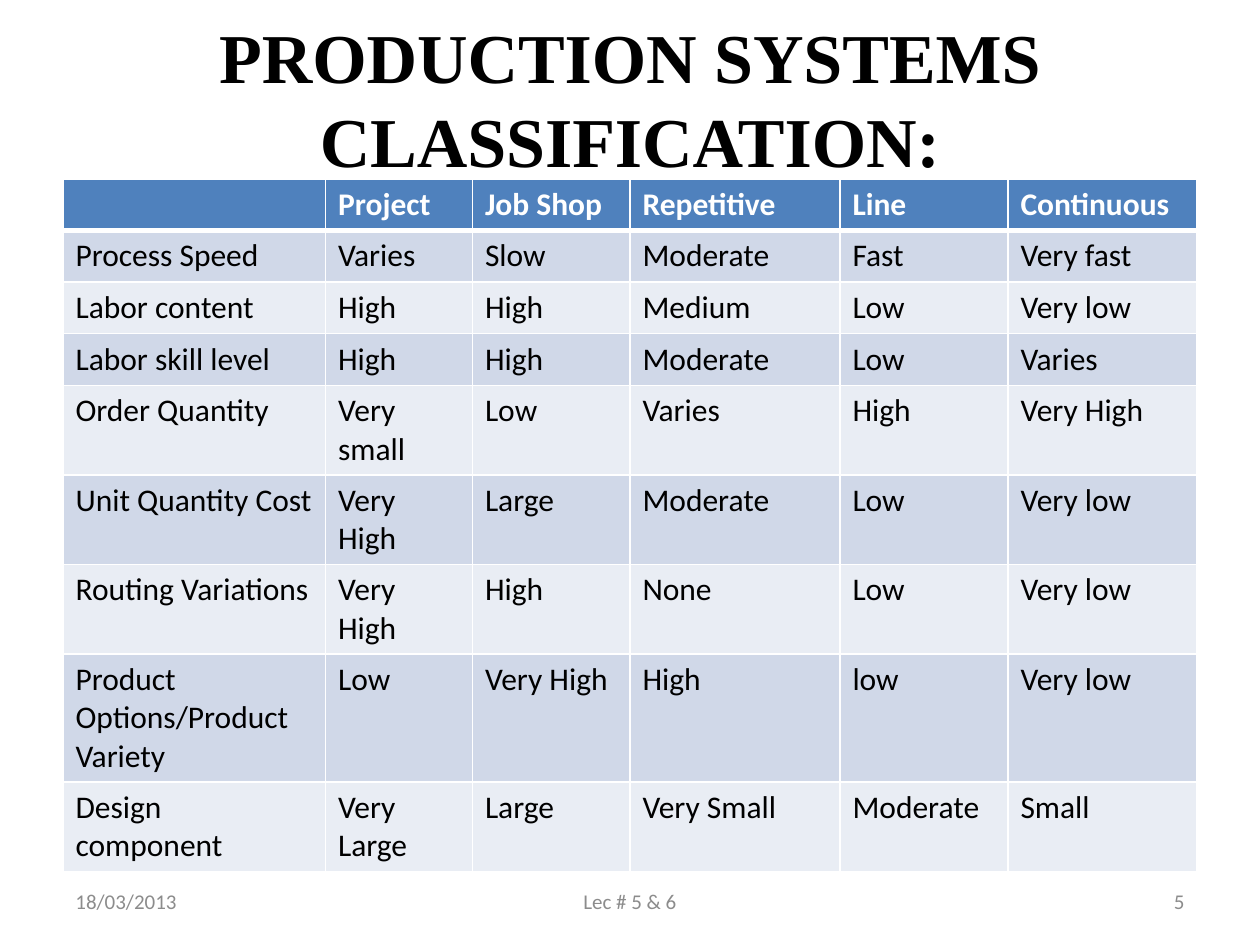
import pptx
import pptx.util
import pptx.dml.color
import pptx.enum.text
import pptx.oxml.ns
from lxml import etree

Pt = pptx.util.Pt
RGBColor = pptx.dml.color.RGBColor
ALIGN = pptx.enum.text.PP_ALIGN
MIDDLE = pptx.enum.text.MSO_ANCHOR.MIDDLE
qn = pptx.oxml.ns.qn

BLACK = RGBColor(0x00, 0x00, 0x00)
WHITE = RGBColor(0xFF, 0xFF, 0xFF)
HEADER_BLUE = RGBColor(0x4F, 0x81, 0xBD)
BAND_DARK = RGBColor(0xD0, 0xD8, 0xE8)
BAND_LIGHT = RGBColor(0xE9, 0xED, 0xF4)
FOOTER_GREY = RGBColor(0x8C, 0x8C, 0x8C)

TITLE_FORMAT = {"name": "Times New Roman", "size": Pt(40), "bold": True, "color": BLACK}
HEADER_FORMAT = {"name": "Calibri", "size": Pt(18), "bold": True, "color": WHITE}
BODY_FORMAT = {**HEADER_FORMAT, "bold": False, "color": BLACK}
FOOTER_FORMAT = {"name": "Calibri", "size": Pt(12), "color": FOOTER_GREY}

COLUMN_WIDTHS = [150, 84, 90, 120, 96, 108]
ROW_HEIGHT = 29.5
CLASSIFICATION = [
    ["", "Project", "Job Shop", "Repetitive", "Line", "Continuous"],
    ["Process Speed", "Varies", "Slow", "Moderate", "Fast", "Very fast"],
    ["Labor content", "High", "High", "Medium", "Low", "Very low"],
    ["Labor skill level", "High", "High", "Moderate", "Low", "Varies"],
    ["Order Quantity", "Very small", "Low", "Varies", "High", "Very High"],
    ["Unit Quantity Cost", "Very High", "Large", "Moderate", "Low", "Very low"],
    ["Routing Variations", "Very High", "High", "None", "Low", "Very low"],
    ["Product Options/Product Variety", "Low", "Very High", "High", "low", "Very low"],
    ["Design component", "Very Large", "Large", "Very Small", "Moderate", "Small"],
]


def format_font(font, values):
    for attribute, value in values.items():
        if attribute == "color":
            font.color.rgb = value
        else:
            setattr(font, attribute, value)


def write(frame, text, values, align):
    frame.word_wrap = True
    frame.vertical_anchor = MIDDLE
    paragraph = frame.paragraphs[0]
    paragraph.alignment = align
    run = paragraph.add_run()
    run.text = text
    format_font(run.font, values)


def set_borders(cell, widths):
    """Draw white borders; widths maps each side (L, R, T, B) to points."""
    properties = cell._tc.get_or_add_tcPr()
    for side, width in widths.items():
        line = etree.SubElement(properties, qn(f"a:ln{side}"), w=str(Pt(width)))
        fill = etree.SubElement(line, qn("a:solidFill"))
        etree.SubElement(fill, qn("a:srgbClr"), val=str(WHITE))


def place_title(slide, left, top, width, height):
    title = slide.shapes.title
    title.left, title.top, title.width, title.height = map(Pt, (left, top, width, height))
    write(title.text_frame, "PRODUCTION SYSTEMS CLASSIFICATION:", TITLE_FORMAT, ALIGN.CENTER)


def place_classification(slide, left, top):
    row_count, column_count = len(CLASSIFICATION), len(COLUMN_WIDTHS)
    table = slide.shapes.add_table(
        row_count, column_count, Pt(left), Pt(top),
        Pt(sum(COLUMN_WIDTHS)), Pt(ROW_HEIGHT * row_count)).table
    for column, width in zip(table.columns, COLUMN_WIDTHS):
        column.width = Pt(width)
    for r, labels in enumerate(CLASSIFICATION):
        table.rows[r].height = Pt(ROW_HEIGHT)
        # Header row first, then alternating bands
        band = HEADER_BLUE if r == 0 else BAND_DARK if r % 2 else BAND_LIGHT
        borders = {"L": 1, "R": 1, "T": 3 if r == 1 else 1, "B": 3 if r == 0 else 1}
        for c, label in enumerate(labels):
            cell = table.cell(r, c)
            set_borders(cell, borders)
            cell.fill.solid()
            cell.fill.fore_color.rgb = band
            paragraph = cell.text_frame.paragraphs[0]
            cell_format = BODY_FORMAT if r else HEADER_FORMAT
            if label:
                run = paragraph.add_run()
                run.text = label
                format_font(run.font, cell_format)
            else:
                format_font(paragraph.font, cell_format)


def place_footer(slide, left, top, width, height):
    side_width, center_width = 168, 228
    parts = [
        ("18/03/2013", left, side_width, ALIGN.LEFT),
        ("Lec # 5 & 6", left + (width - center_width) / 2, center_width, ALIGN.CENTER),
        ("5", left + width - side_width, side_width, ALIGN.RIGHT),
    ]
    for text, part_left, part_width, align in parts:
        box = slide.shapes.add_textbox(Pt(part_left), Pt(top), Pt(part_width), Pt(height))
        write(box.text_frame, text, FOOTER_FORMAT, align)


def main():
    presentation = pptx.Presentation()
    presentation.slide_width, presentation.slide_height = Pt(720), Pt(540)
    slide = presentation.slides.add_slide(presentation.slide_layouts[5])
    place_title(slide, 36, 21.6, 648, 68.4)
    place_classification(slide, 36, 102.24)
    place_footer(slide, 36, 500.5, 648, 28.75)
    presentation.save("out.pptx")


if __name__ == "__main__":
    main()
